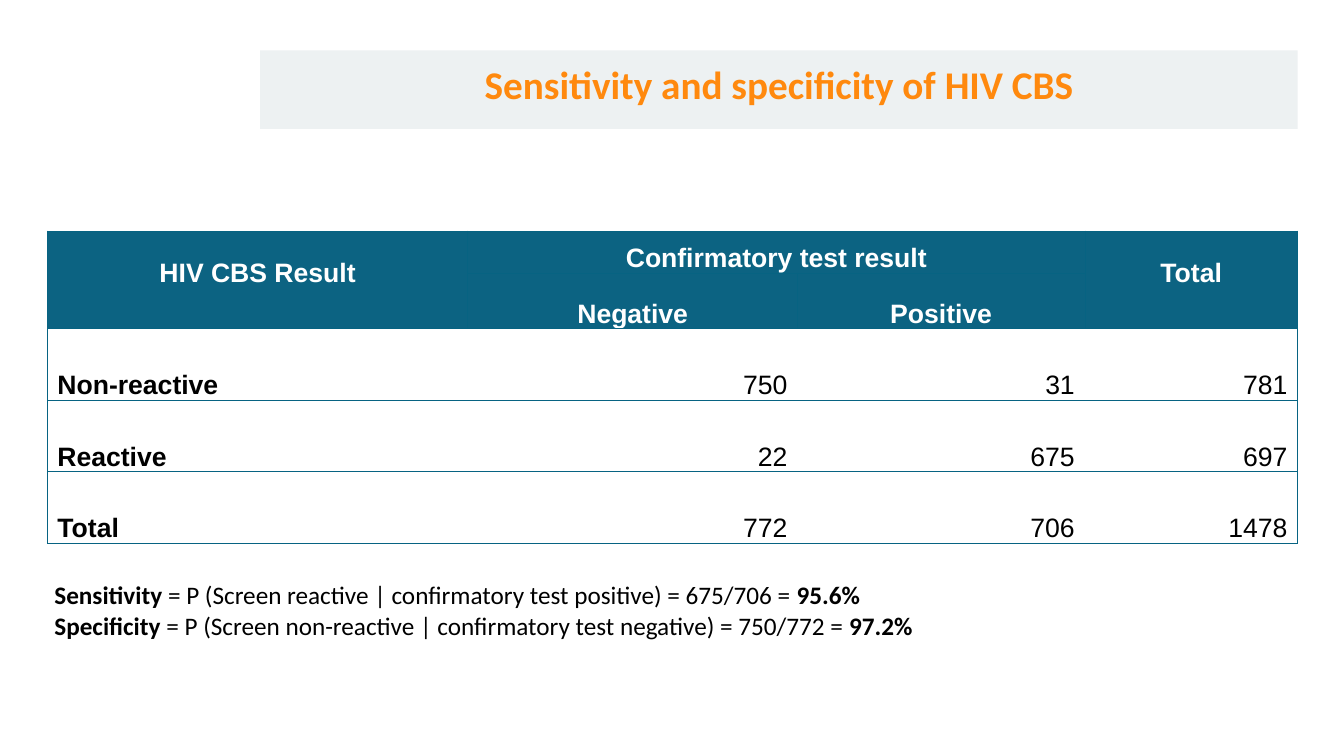
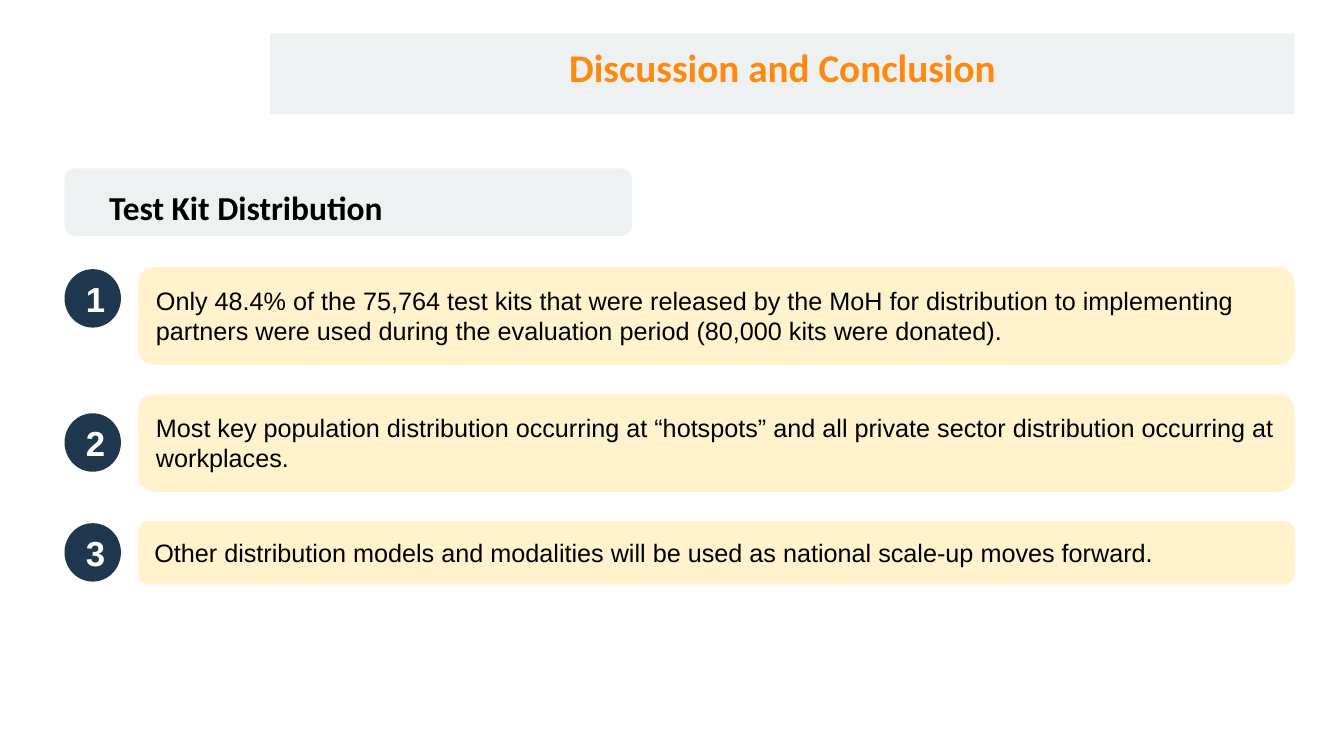
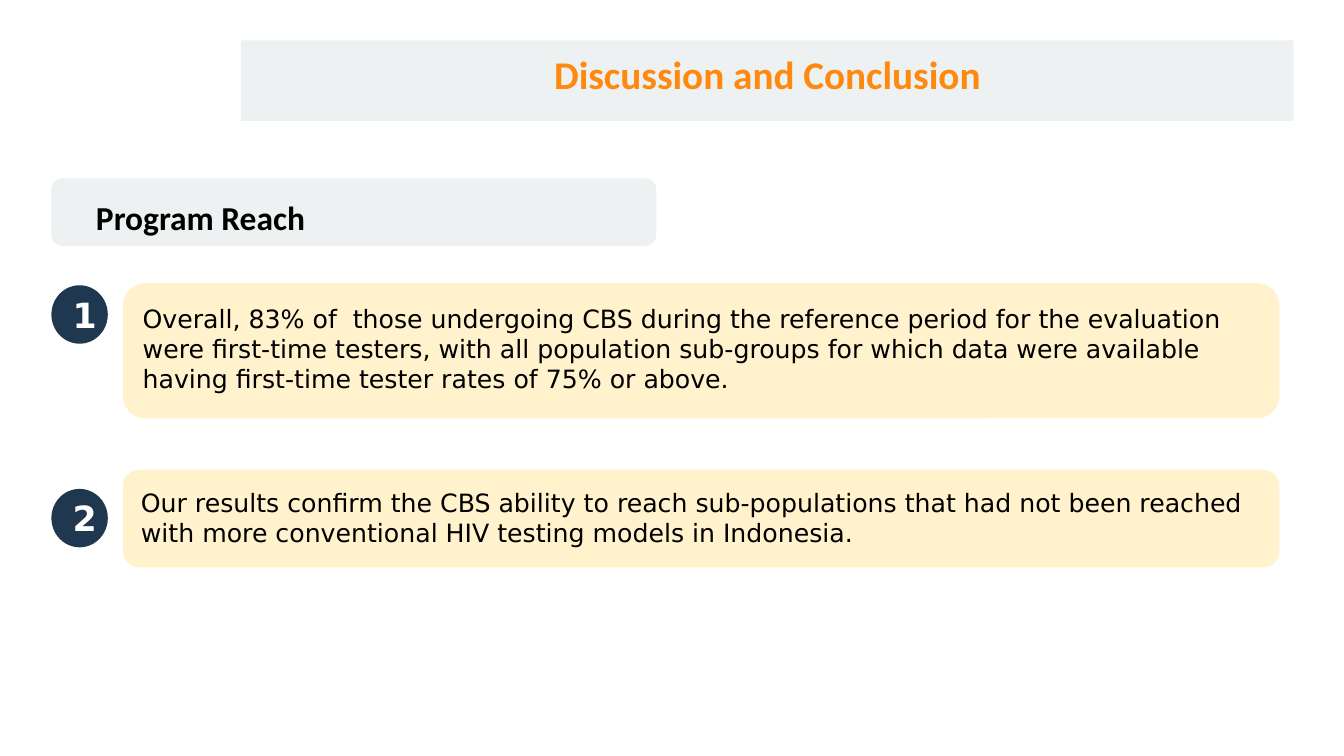
from dataclasses import dataclass

from lxml import etree
from pptx import Presentation
from pptx.dml.color import RGBColor
from pptx.enum.shapes import MSO_SHAPE
from pptx.enum.text import MSO_ANCHOR, MSO_AUTO_SIZE, PP_ALIGN
from pptx.oxml.ns import qn
from pptx.util import Inches, Pt

ROUNDED = MSO_SHAPE.ROUNDED_RECTANGLE
OVAL = MSO_SHAPE.OVAL
TOP, MIDDLE, BOTTOM = MSO_ANCHOR.TOP, MSO_ANCHOR.MIDDLE, MSO_ANCHOR.BOTTOM
LEFT, CENTER, RIGHT = PP_ALIGN.LEFT, PP_ALIGN.CENTER, PP_ALIGN.RIGHT
JUSTIFY = PP_ALIGN.JUSTIFY
FIXED_SIZE = MSO_AUTO_SIZE.NONE

WHITE = "FFFFFF"
BLACK = "000000"
ORANGE = "FF890E"
BAND_GREY = "EDF1F2"
CARD_CREAM = "FFF2CC"
BADGE_NAVY = "1F3850"
HEADER_TEAL = "0C6382"
BORDER_TEAL = "076382"

TITLE_LAYOUT = 5
CARD_WIDTH = 11.47
BADGE_WIDTH, BADGE_HEIGHT = 0.56, 0.58


@dataclass(frozen=True)
class Box:
    left: float
    top: float
    width: float
    height: float

    def lengths(self) -> list:
        return [Inches(n) for n in (self.left, self.top, self.width, self.height)]


@dataclass(frozen=True)
class TextStyle:
    font: str
    size: float
    color: str = BLACK
    bold: bool = False
    align: PP_ALIGN = LEFT


@dataclass(frozen=True)
class Card:
    text: str
    height: float
    badge_drop: float = 0.02


@dataclass(frozen=True)
class Discussion:
    title_box: Box
    heading: str
    heading_box: Box
    cards_left: float
    cards_top: float
    gap: float
    font: str
    cards: tuple


@dataclass(frozen=True)
class Formula:
    name: str
    expression: str
    result: str


TITLE_STYLE = TextStyle("Calibri", 28, ORANGE, True, CENTER)
HEADING_STYLE = TextStyle("Calibri", 23.9, bold=True)
FORMULA_STYLE = TextStyle("Calibri", 18, align=JUSTIFY)
HEADER_STYLE = TextStyle("Arial", 19, WHITE, True, CENTER)
LABEL_STYLE = TextStyle("Arial", 19, bold=True)
VALUE_STYLE = TextStyle("Arial", 19, align=RIGHT)

RESULTS = (
    ("HIV CBS Result", "Confirmatory test result", "", "Total"),
    ("", "Negative", "Positive", ""),
    ("Non-reactive", "750", "31", "781"),
    ("Reactive", "22", "675", "697"),
    ("Total", "772", "706", "1478"),
)
HEADER_ROWS = 2
MERGES = ((0, 0, 1, 0), (0, 1, 0, 2), (0, 3, 1, 3))
COLUMN_WIDTHS = (4.17, 3.27, 2.85, 2.11)
ROW_HEIGHTS = (0.42, 0.55, 0.71, 0.71, 0.71)

FORMULAS = (
    Formula(
        "Sensitivity",
        " = P (Screen reactive | confirmatory test positive) = 675/706 = ",
        "95.6%",
    ),
    Formula(
        "Specificity",
        " = P (Screen non-reactive | confirmatory test negative) = 750/772 = ",
        "97.2%",
    ),
)

DISCUSSIONS = (
    Discussion(
        Box(2.68, 0.33, 10.16, 0.8),
        "Test Kit Distribution",
        Box(0.64, 1.67, 5.63, 0.67),
        1.37,
        2.65,
        0.29,
        "Arial",
        (
            Card(
                "Only 48.4% of the 75,764 test kits that were released by the MoH "
                "for distribution to implementing partners were used during the "
                "evaluation period (80,000 kits were donated).",
                0.97,
            ),
            Card(
                "Most key population distribution occurring at “hotspots” and all "
                "private sector distribution occurring at workplaces.",
                0.97,
                0.19,
            ),
            Card(
                "Other distribution models and modalities will be used as national "
                "scale-up moves forward.",
                0.63,
            ),
        ),
    ),
    Discussion(
        Box(2.39, 0.4, 10.44, 0.8),
        "Program Reach",
        Box(0.51, 1.77, 6, 0.67),
        1.22,
        2.81,
        0.51,
        "DejaVu Sans",
        (
            Card(
                "Overall, 83% of  those undergoing CBS during the reference period "
                "for the evaluation were first-time testers, with all population "
                "sub-groups for which data were available having first-time tester "
                "rates of 75% or above.",
                1.34,
            ),
            Card(
                "Our results confirm the CBS ability to reach sub-populations that "
                "had not been reached with more conventional HIV testing models in "
                "Indonesia.",
                0.97,
                0.19,
            ),
        ),
    ),
)


def color(hex_value: str) -> RGBColor:
    return RGBColor.from_string(hex_value)


def fill_solid(target, hex_value: str) -> None:
    target.fill.solid()
    target.fill.fore_color.rgb = color(hex_value)


def style_paragraph(paragraph, style: TextStyle) -> None:
    paragraph.alignment = style.align
    font = paragraph.font
    font.name = style.font
    font.size = Pt(style.size)
    font.bold = style.bold
    font.color.rgb = color(style.color)


def set_frame(frame, anchor: MSO_ANCHOR, horizontal: float, vertical: float) -> None:
    frame.word_wrap = True
    frame.auto_size = FIXED_SIZE
    frame.vertical_anchor = anchor
    frame.margin_left = frame.margin_right = Inches(horizontal)
    frame.margin_top = frame.margin_bottom = Inches(vertical)


def write_text(
    shape, text: str, style: TextStyle, anchor: MSO_ANCHOR, inset: float
) -> None:
    frame = shape.text_frame
    set_frame(frame, anchor, inset, inset)
    frame.text = text
    style_paragraph(frame.paragraphs[0], style)


def add_text_panel(
    slide, kind: MSO_SHAPE, box: Box, fill: str, text: str,
    style: TextStyle, anchor: MSO_ANCHOR, inset: float,
):
    shape = slide.shapes.add_shape(kind, *box.lengths())
    shape.shadow.inherit = False
    fill_solid(shape, fill)
    shape.line.fill.background()
    write_text(shape, text, style, anchor, inset)
    return shape


def add_titled_slide(presentation, title: str, box: Box):
    slide = presentation.slides.add_slide(presentation.slide_layouts[TITLE_LAYOUT])
    placeholder = slide.shapes.title
    placeholder.left, placeholder.top, placeholder.width, placeholder.height = box.lengths()
    properties = placeholder._element.spPr
    geometry = etree.SubElement(properties, qn("a:prstGeom"), prst="roundRect")
    etree.SubElement(geometry, qn("a:avLst"))
    fill_solid(placeholder, BAND_GREY)
    write_text(placeholder, title, TITLE_STYLE, TOP, 0.1)
    return slide


def set_borders(cell, visible_sides: str) -> None:
    properties = cell._tc.get_or_add_tcPr()
    for side in "LRTB":
        line = etree.SubElement(properties, qn(f"a:ln{side}"), w=str(Pt(0.5)))
        if side in visible_sides:
            fill = etree.SubElement(line, qn("a:solidFill"))
            etree.SubElement(fill, qn("a:srgbClr"), val=BORDER_TEAL)
        else:
            etree.SubElement(line, qn("a:noFill"))


def format_cell(cell, row: int, column: int, text: str) -> None:
    if row < HEADER_ROWS:
        set_borders(cell, "LRTB")
        fill_solid(cell, HEADER_TEAL)
        style = HEADER_STYLE
    else:
        outer_sides = {0: "L", len(COLUMN_WIDTHS) - 1: "R"}
        set_borders(cell, "TB" + outer_sides.get(column, ""))
        cell.fill.background()
        style = VALUE_STYLE if column else LABEL_STYLE
    cell.margin_left = cell.margin_right = Inches(0.1)
    cell.margin_top = cell.margin_bottom = 0
    cell.vertical_anchor = MIDDLE if cell.is_merge_origin and column != 1 else BOTTOM
    if text:
        cell.text = text
        paragraph = cell.text_frame.paragraphs[0]
        paragraph.line_spacing = Pt(12)
        style_paragraph(paragraph, style)


def add_results_table(slide, left: float, top: float) -> None:
    box = Box(left, top, sum(COLUMN_WIDTHS), sum(ROW_HEIGHTS))
    table = slide.shapes.add_table(
        len(ROW_HEIGHTS), len(COLUMN_WIDTHS), *box.lengths()
    ).table
    table.first_row = table.horz_banding = False
    for column, width in zip(table.columns, COLUMN_WIDTHS):
        column.width = Inches(width)
    for row, height in zip(table.rows, ROW_HEIGHTS):
        row.height = Inches(height)
    for first_row, first_column, last_row, last_column in MERGES:
        table.cell(first_row, first_column).merge(table.cell(last_row, last_column))
    for row_index, texts in enumerate(RESULTS):
        for column_index, text in enumerate(texts):
            cell = table.cell(row_index, column_index)
            format_cell(cell, row_index, column_index, text)


def add_formulas(slide, box: Box) -> None:
    frame = slide.shapes.add_textbox(*box.lengths()).text_frame
    set_frame(frame, MIDDLE, 0.13, 0.07)
    for index, formula in enumerate(FORMULAS):
        paragraph = frame.add_paragraph() if index else frame.paragraphs[0]
        style_paragraph(paragraph, FORMULA_STYLE)
        for text, bold in (
            (formula.name, True), (formula.expression, False), (formula.result, True)
        ):
            run = paragraph.add_run()
            run.text = text
            run.font.bold = bold


def add_heading(slide, text: str, box: Box) -> None:
    shape = add_text_panel(
        slide, ROUNDED, box, BAND_GREY, text, HEADING_STYLE, BOTTOM, 0.05
    )
    shape.text_frame.margin_left = Inches(0.41)
    shape.text_frame.paragraphs[0].line_spacing = 0.9


def add_cards(slide, discussion: Discussion) -> None:
    badge_left = discussion.heading_box.left
    top = discussion.cards_top
    badge_style = TextStyle(discussion.font, 24.8, WHITE, True, CENTER)
    card_style = TextStyle(discussion.font, 18)
    for number, card in enumerate(discussion.cards, start=1):
        badge_box = Box(badge_left, top + card.badge_drop, BADGE_WIDTH, BADGE_HEIGHT)
        card_box = Box(discussion.cards_left, top, CARD_WIDTH, card.height)
        add_text_panel(
            slide, OVAL, badge_box, BADGE_NAVY, str(number), badge_style, MIDDLE, 0.13
        )
        add_text_panel(
            slide, ROUNDED, card_box, CARD_CREAM, card.text, card_style, TOP, 0.13
        )
        top += card.height + discussion.gap


def add_results_slide(presentation) -> None:
    slide = add_titled_slide(
        presentation, "Sensitivity and specificity of HIV CBS", Box(2.58, 0.5, 10.29, 0.78)
    )
    add_results_table(slide, 0.47, 2.29)
    add_formulas(slide, Box(0.41, 5.68, 8.88, 0.74))


def add_discussion_slide(presentation, discussion: Discussion) -> None:
    slide = add_titled_slide(
        presentation, "Discussion and Conclusion", discussion.title_box
    )
    add_heading(slide, discussion.heading, discussion.heading_box)
    add_cards(slide, discussion)


def main() -> None:
    presentation = Presentation()
    presentation.slide_width = Inches(13.33)
    presentation.slide_height = Inches(7.5)
    add_results_slide(presentation)
    for discussion in DISCUSSIONS:
        add_discussion_slide(presentation, discussion)
    presentation.save("out.pptx")


if __name__ == "__main__":
    main()
